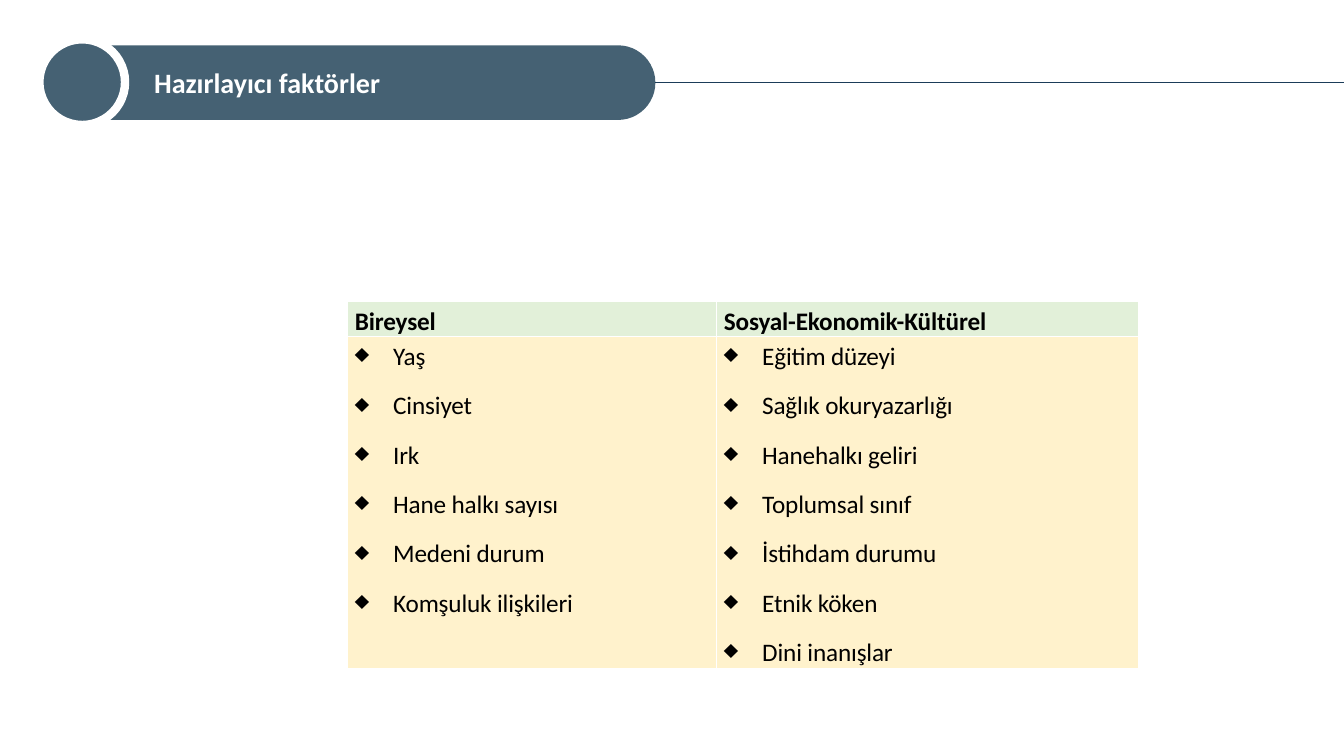
import lxml.etree
import pptx
import pptx.dml.color
import pptx.enum.shapes
import pptx.enum.text
import pptx.oxml.ns
import pptx.util

PX = 9144  # EMU per px, 100 px to the inch
FONT = "Calibri"
COLORS = {
    "banner": "456173",
    "rule": "1B3C59",
    "header": "E2F0D9",
    "body": "FFF2CC",
    "white": "FFFFFF",
    "black": "000000",
}
FACTORS = {
    "Bireysel": [
        "Yaş", "Cinsiyet", "Irk", "Hane halkı sayısı", "Medeni durum",
        "Komşuluk ilişkileri",
    ],
    "Sosyal-Ekonomik-Kültürel": [
        "Eğitim düzeyi", "Sağlık okuryazarlığı", "Hanehalkı geliri",
        "Toplumsal sınıf", "İstihdam durumu", "Etnik köken", "Dini inanışlar",
    ],
}
SHAPE = pptx.enum.shapes.MSO_SHAPE


def px(*lengths):
    return [pptx.util.Emu(length * PX) for length in lengths]


def rgb(name):
    return pptx.dml.color.RGBColor.from_string(COLORS[name])


def add_child(parent, tag, **attributes):
    return lxml.etree.SubElement(parent, pptx.oxml.ns.qn(tag), attributes)


def write_text(frame, lines, size=18, color="black", bold=False, tracking=0,
               line_spacing=None, space_after=0, bullet=None, indent=0):
    for index, line in enumerate(lines):
        paragraph = frame.add_paragraph() if index else frame.paragraphs[0]
        paragraph.alignment = pptx.enum.text.PP_ALIGN.LEFT
        paragraph.line_spacing = line_spacing
        paragraph.space_after = pptx.util.Pt(space_after)
        if bullet:
            properties = paragraph._p.get_or_add_pPr()
            properties.set("marL", str(indent * PX))
            properties.set("indent", str(-indent * PX))
            add_child(properties, "a:buChar", char=bullet)
        run = paragraph.add_run()
        run.text = line
        run.font.name = FONT
        run.font.size = pptx.util.Pt(size)
        run.font.bold = bold
        run.font.color.rgb = rgb(color)
        if tracking:
            run._r.get_or_add_rPr().set("spc", str(tracking))


def add_filled_shape(slide, kind, box, fill, outline=None, outline_width=0):
    shape = slide.shapes.add_shape(kind, *px(*box))
    shape.shadow.inherit = False
    shape.fill.solid()
    shape.fill.fore_color.rgb = rgb(fill)
    if outline:
        shape.line.color.rgb = rgb(outline)
        shape.line.width = pptx.util.Pt(outline_width)
    else:
        shape.line.fill.background()
    return shape


def add_rule(slide, start_shape, start, end, color, width):
    rule = slide.shapes.add_connector(
        pptx.enum.shapes.MSO_CONNECTOR.STRAIGHT, *px(*start, *end))
    rule.begin_connect(start_shape, 3)
    rule.line.color.rgb = rgb(color)
    rule.line.width = pptx.util.Pt(width)
    add_child(rule._element.spPr, "a:effectLst")


def style_cell(cell, fill):
    cell.margin_left, cell.margin_right = px(7, 7)
    cell.margin_top = cell.margin_bottom = 0
    properties = cell._tc.get_or_add_tcPr()
    for side in ("a:lnL", "a:lnR", "a:lnT", "a:lnB"):
        border = add_child(properties, side, w=str(pptx.util.Pt(1)))
        add_child(add_child(border, "a:solidFill"), "a:srgbClr", val=COLORS["white"])
    cell.fill.solid()
    cell.fill.fore_color.rgb = rgb(fill)


def add_factor_table(slide, left, top, widths, heights):
    table = slide.shapes.add_table(
        len(heights), len(widths),
        *px(left, top, sum(widths), sum(heights))).table
    for row, height in zip(table.rows, px(*heights)):
        row.height = height
    for index, (heading, factors) in enumerate(FACTORS.items()):
        table.columns[index].width = px(widths[index])[0]
        header, body = table.cell(0, index), table.cell(1, index)
        style_cell(header, "header")
        style_cell(body, "body")
        write_text(header.text_frame, [heading], bold=True, tracking=-10,
                   line_spacing=1.15, space_after=10)
        write_text(body.text_frame, factors, tracking=-10, line_spacing=1.15,
                   space_after=10, bullet="♦", indent=38)


def main():
    presentation = pptx.Presentation()
    presentation.slide_width, presentation.slide_height = px(1333, 750)
    slide = presentation.slides.add_slide(presentation.slide_layouts[6])

    # Title banner with its circle and rule
    banner = add_filled_shape(slide, SHAPE.ROUNDED_RECTANGLE, (39, 45, 611, 74), "banner")
    banner.adjustments[0] = 0.5
    banner.text_frame.margin_left = px(103)[0]
    banner.text_frame.vertical_anchor = pptx.enum.text.MSO_ANCHOR.MIDDLE
    write_text(banner.text_frame, ["Hazırlayıcı faktörler"], size=20,
               color="white", bold=True)
    add_filled_shape(slide, SHAPE.OVAL, (39, 39, 85, 85), "banner",
                     outline="white", outline_width=6)
    add_rule(slide, banner, (650, 82), (1333, 82), "rule", 0.5)

    # Factors by group
    add_factor_table(slide, 345, 299, widths=(366, 418), heights=(34, 321))

    presentation.save("out.pptx")


if __name__ == "__main__":
    main()
